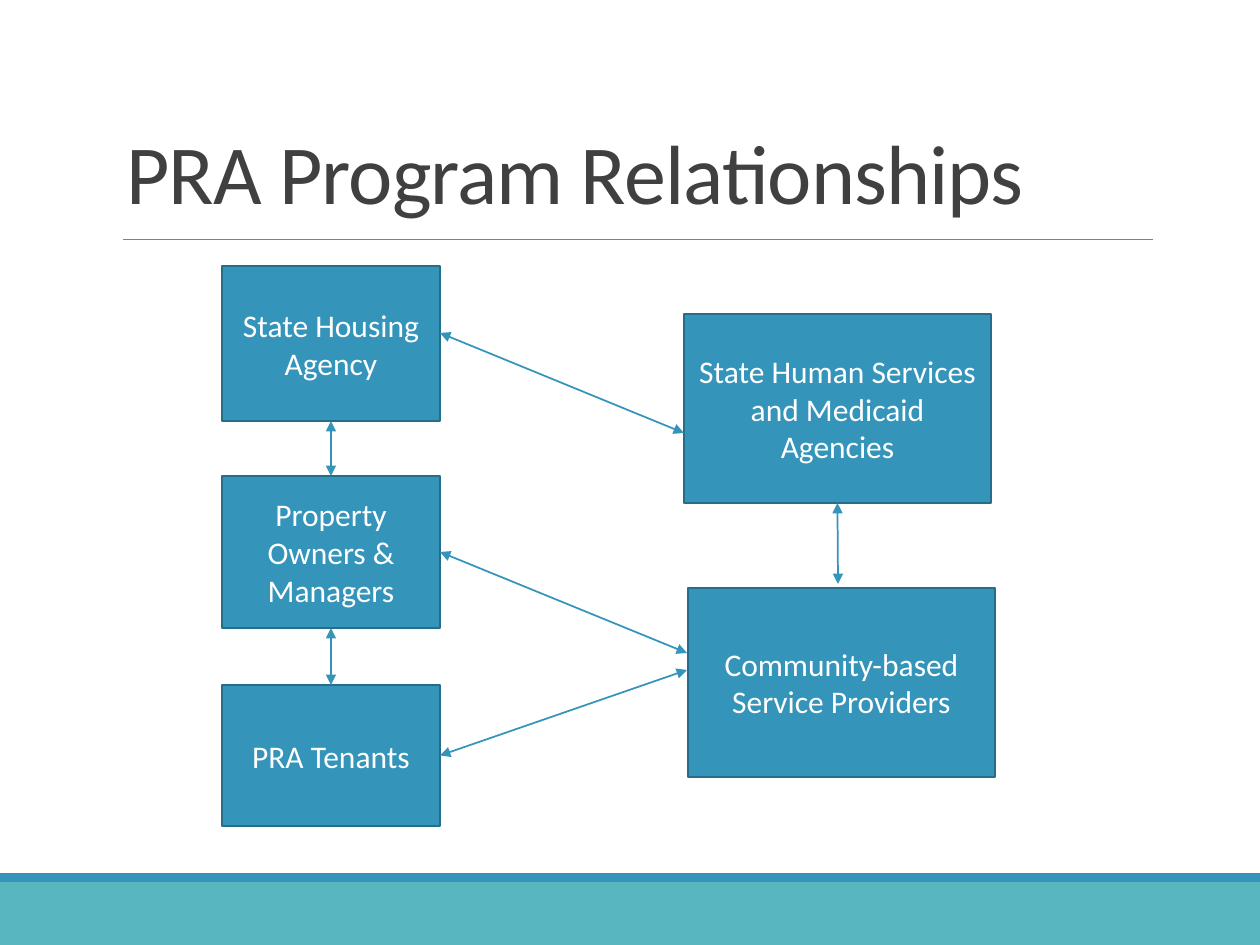
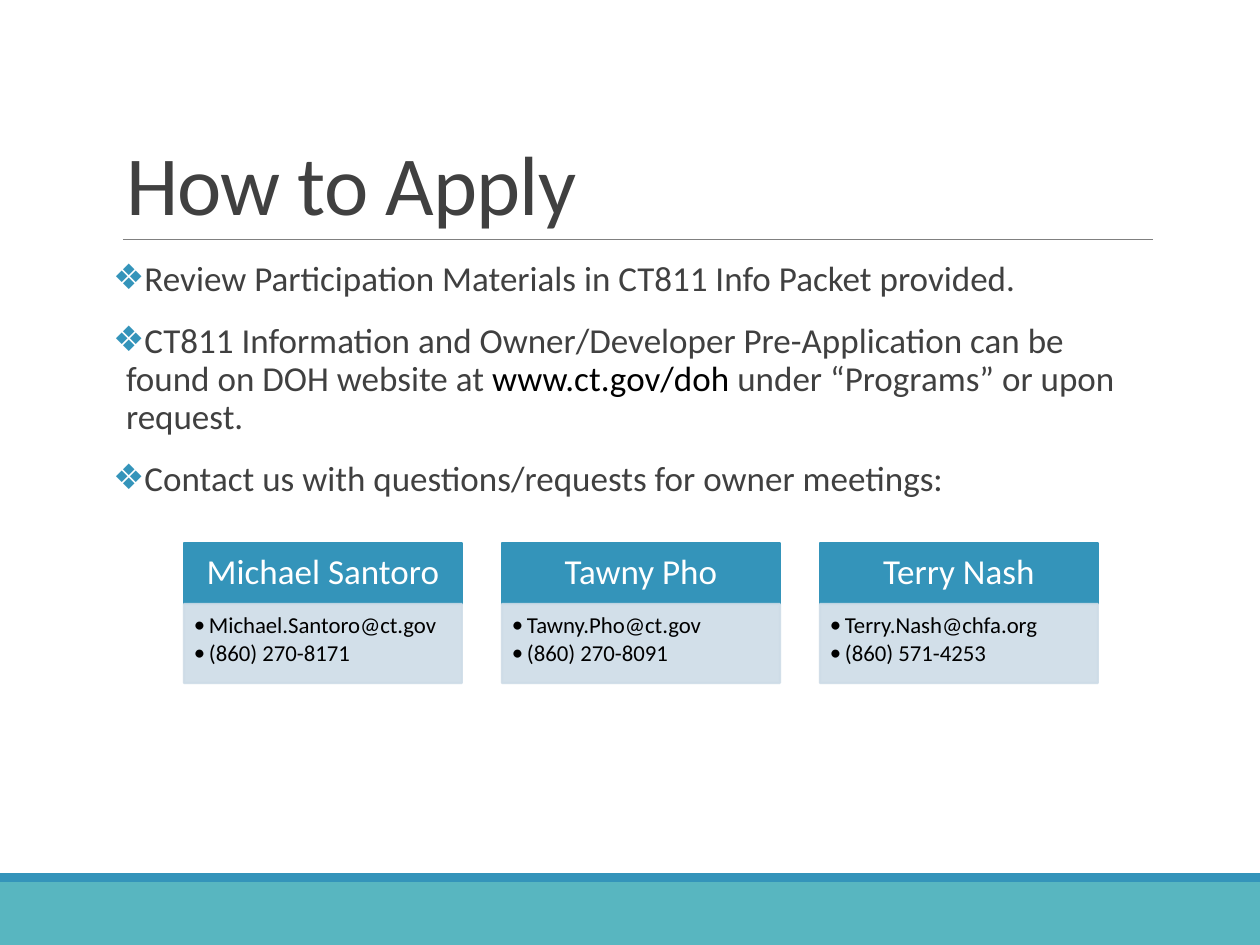
from dataclasses import dataclass

from lxml import etree
from pptx import Presentation
from pptx.dml.color import RGBColor
from pptx.enum.shapes import MSO_CONNECTOR, MSO_SHAPE
from pptx.enum.text import MSO_ANCHOR, MSO_AUTO_SIZE, PP_ALIGN
from pptx.oxml.ns import qn
from pptx.util import Emu, Pt

RECTANGLE = MSO_SHAPE.RECTANGLE
STRAIGHT = MSO_CONNECTOR.STRAIGHT
TOP, MIDDLE, BOTTOM = MSO_ANCHOR.TOP, MSO_ANCHOR.MIDDLE, MSO_ANCHOR.BOTTOM
LEFT, CENTER = PP_ALIGN.LEFT, PP_ALIGN.CENTER
NO_AUTOFIT = MSO_AUTO_SIZE.NONE
TITLE_ONLY = 5
SIDE_TOP, SIDE_BOTTOM, SIDE_RIGHT = 0, 2, 3
PX_PER_INCH = 126


@dataclass(frozen=True)
class Theme:
    """Fonts, colours and type sizes of the deck."""
    font: str = "Calibri"
    blue: str = "3494BA"
    dark_blue: str = "266D8A"
    teal: str = "58B6C0"
    pale: str = "CEDCE7"
    rule: str = "808080"
    text: str = "404040"
    black: str = "000000"
    white: str = "FFFFFF"
    title_size: int = 48
    body_size: int = 20
    box_size: int = 18
    detail_size: int = 13
    border: float = 1.25


@dataclass(frozen=True)
class Box:
    """A rectangle in px."""
    left: int
    top: int
    width: int
    height: int

    def inside(self, left, top, width, height):
        """Return a box whose corner is measured from this one."""
        return Box(self.left + left, self.top + top, width, height)

    def emu(self):
        """Return left, top, width and height in EMU."""
        return [px(length) for length in (self.left, self.top, self.width, self.height)]


THEME = Theme()
PAGE = Box(0, 0, 1260, 945)
DIAGRAM = Box(222, 266, 774, 561)
BODY = Box(113, 255, 1040, 250)
CONTACTS = Box(184, 543, 914, 140)

PARTIES = {
    "housing": ("State Housing Agency", (0, 0, 218, 155)),
    "owners": ("Property Owners & Managers", (0, 210, 218, 152)),
    "tenants": ("PRA Tenants", (0, 419, 218, 141)),
    "services": ("State Human Services and Medicaid Agencies", (462, 48, 307, 189)),
    "providers": ("Community-based Service Providers", (466, 322, 307, 189)),
}
RELATIONSHIPS = [
    (("housing", SIDE_BOTTOM), ("owners", SIDE_TOP)),
    (("owners", SIDE_BOTTOM), ("tenants", SIDE_TOP)),
    (("services", SIDE_BOTTOM), (616, 318)),
    ((218, 67), (462, 167)),
    (("owners", SIDE_RIGHT), (465, 387)),
    (("tenants", SIDE_RIGHT), (465, 404)),
]
STEPS = [
    [("Review Participation Materials in CT811 Info Packet provided.", THEME.text)],
    [("CT811 Information and Owner/Developer Pre-Application can be found on DOH website at ", THEME.text),
     ("www.ct.gov/doh ", THEME.black),
     ("under “Programs” or upon request.", THEME.text)],
    [("Contact us with questions/requests for owner meetings:", THEME.text)],
]
PEOPLE = [
    ("Michael Santoro", "Michael.Santoro@ct.gov", "(860) 270-8171"),
    ("Tawny Pho", "Tawny.Pho@ct.gov", "(860) 270-8091"),
    ("Terry Nash", "Terry.Nash@chfa.org", "(860) 571-4253"),
]


def px(length):
    """Turn px into EMU."""
    return Emu(round(length * 914400 / PX_PER_INCH))


def rgb(color):
    """Turn a hex string into a colour."""
    return RGBColor.from_string(color)


def format_para(para, size, color, align=LEFT, spacing=None):
    """Set the font, alignment and line spacing of a paragraph."""
    para.alignment = align
    para.line_spacing = spacing
    para.font.name = THEME.font
    para.font.size = Pt(size)
    para.font.color.rgb = rgb(color)


def add_bullet(para, char, color, indent):
    """Give a paragraph a bullet with a hanging indent in px."""
    properties = para._p.get_or_add_pPr()
    properties.set("marL", str(px(indent)))
    properties.set("indent", str(-px(indent)))
    holder = etree.SubElement(properties, qn("a:buClr"))
    etree.SubElement(holder, qn("a:srgbClr"), val=color)
    etree.SubElement(properties, qn("a:buFont"), typeface=THEME.font)
    etree.SubElement(properties, qn("a:buChar"), char=char)


def set_frame(frame, anchor, insets):
    """Set wrapping, anchor and insets in px of a text frame."""
    frame.word_wrap = True
    frame.auto_size = NO_AUTOFIT
    frame.vertical_anchor = anchor
    (frame.margin_left, frame.margin_top,
     frame.margin_right, frame.margin_bottom) = [px(inset) for inset in insets]


def add_rectangle(page, box, fill, line=None):
    """Add a flat rectangle."""
    shape = page.shapes.add_shape(RECTANGLE, *box.emu())
    shape.shadow.inherit = False
    shape.fill.solid()
    shape.fill.fore_color.rgb = rgb(fill)
    if line:
        shape.line.color.rgb = rgb(line)
        shape.line.width = Pt(THEME.border)
    else:
        shape.line.fill.background()
    return shape


def add_line(page, start, end, color, width):
    """Add a straight line between two points in px."""
    line = page.shapes.add_connector(STRAIGHT, *[px(value) for value in (*start, *end)])
    line.line.color.rgb = rgb(color)
    line.line.width = Pt(width)
    etree.SubElement(line._element.spPr, qn("a:effectLst"))
    return line


def add_page(deck, title, title_height):
    """Add a slide with the shared bands, rule and title."""
    page = deck.slides.add_slide(deck.slide_layouts[TITLE_ONLY])
    add_rectangle(page, PAGE.inside(0, 882, PAGE.width, 63), THEME.teal)
    add_rectangle(page, PAGE.inside(0, 873, PAGE.width, 9), THEME.blue)
    add_line(page, (123, 239), (1153, 239), THEME.rule, 0.5)
    heading = page.shapes.title
    heading.left, heading.top, heading.width, heading.height = Box(113, 39, 1040, title_height).emu()
    set_frame(heading.text_frame, BOTTOM, (13, 6, 13, 6))
    heading.text_frame.text = title
    para = heading.text_frame.paragraphs[0]
    format_para(para, THEME.title_size, THEME.text, spacing=0.85)
    para.font._rPr.set("spc", "-50")
    return page


def add_party(page, box, name):
    """Add one labelled box of the diagram."""
    shape = add_rectangle(page, box, THEME.blue, THEME.dark_blue)
    set_frame(shape.text_frame, MIDDLE, (13, 6, 13, 6))
    shape.text_frame.text = name
    format_para(shape.text_frame.paragraphs[0], THEME.box_size, THEME.white, CENTER)
    return shape


def add_relationship(page, region, parties, start, end):
    """Add a double arrow whose ends are a party's side or a point."""
    arrow = add_line(page, (region.left, region.top), (region.left, region.top), THEME.blue, 1)
    for where, join in ((start, arrow.begin_connect), (end, arrow.end_connect)):
        if where[0] in parties:
            join(parties[where[0]], where[1])
            continue
        across, down = px(region.left + where[0]), px(region.top + where[1])
        if where is start:
            arrow.begin_x, arrow.begin_y = across, down
        else:
            arrow.end_x, arrow.end_y = across, down
    outline = arrow.line._get_or_add_ln()
    for tip in ("a:headEnd", "a:tailEnd"):
        etree.SubElement(outline, qn(tip), type="triangle")


def add_diagram(page, region):
    """Place the parties and the arrows between them."""
    parties = {key: add_party(page, region.inside(*place), name)
               for key, (name, place) in PARTIES.items()}
    for start, end in RELATIONSHIPS:
        add_relationship(page, region, parties, start, end)


def add_steps(page, region):
    """Place the bulleted steps."""
    frame = page.shapes.add_textbox(*region.emu()).text_frame
    set_frame(frame, TOP, (0, 6, 0, 6))
    for index, spans in enumerate(STEPS):
        para = frame.add_paragraph() if index else frame.paragraphs[0]
        add_bullet(para, "❖", THEME.blue, 13)
        format_para(para, THEME.body_size, THEME.text, spacing=0.9)
        para.space_before, para.space_after = Pt(12), Pt(2)
        for words, color in spans:
            span = para.add_run()
            span.text = words
            if color != THEME.text:
                span.font.color.rgb = rgb(color)


def add_contact(page, box, name, details):
    """Place one contact card: a name above its details."""
    header = add_rectangle(page, box.inside(0, 0, box.width, 61), THEME.blue, THEME.blue)
    set_frame(header.text_frame, MIDDLE, (20, 11, 20, 11))
    header.text_frame.text = name
    format_para(header.text_frame.paragraphs[0], THEME.body_size, THEME.white, CENTER, 0.9)

    panel = add_rectangle(page, box.inside(0, 61, box.width, box.height - 61), THEME.pale, THEME.pale)
    for color in panel._element.spPr.iter(qn("a:srgbClr")):
        etree.SubElement(color, qn("a:alpha"), val="90000")
    frame = panel.text_frame
    set_frame(frame, TOP, (10, 10, 13, 14))
    frame.text = "\n".join(details)
    for para in frame.paragraphs:
        add_bullet(para, "•", THEME.black, 15)
        format_para(para, THEME.detail_size, THEME.black, spacing=0.9)
        para.space_after = Pt(2)


def add_contacts(page, region):
    """Place the contact cards in a row of equal steps."""
    width = 278
    step = (region.width - width) // (len(PEOPLE) - 1)
    for index, (name, *details) in enumerate(PEOPLE):
        add_contact(page, region.inside(index * step, 0, width, region.height), name, details)


def main():
    """Build and save the deck."""
    deck = Presentation()
    deck.slide_width, deck.slide_height = px(PAGE.width), px(PAGE.height)
    add_diagram(add_page(deck, "PRA Program Relationships", 189), DIAGRAM)
    page = add_page(deck, "How to Apply", 200)
    add_steps(page, BODY)
    add_contacts(page, CONTACTS)
    deck.save("out.pptx")


if __name__ == "__main__":
    main()
